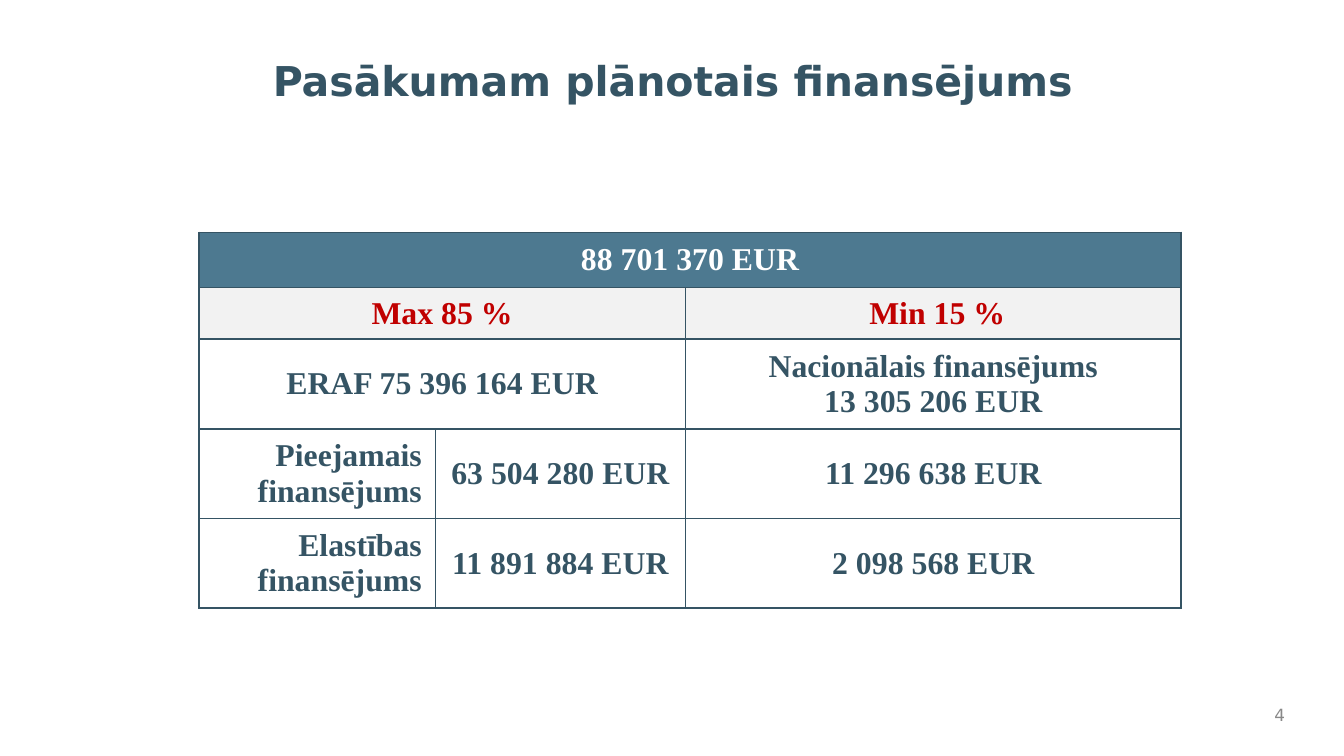
"""Build the slide with the funding planned for the measure."""
from lxml import etree
from pptx import Presentation
from pptx.dml.color import RGBColor
from pptx.enum.text import MSO_ANCHOR, PP_ALIGN
from pptx.oxml.ns import qn
from pptx.util import Inches, Pt

LEFT, MID, RIGHT = PP_ALIGN.LEFT, PP_ALIGN.CENTER, PP_ALIGN.RIGHT
CENTRE = MSO_ANCHOR.MIDDLE

THEME = {
    "ink": "355464", "head": "4D7990", "band": "F2F2F2", "red": "C00000",
    "grey": "898989", "white": "FFFFFF",
    "title": {"name": "DejaVu Sans", "size": Pt(22), "bold": True},
    "cell": {"name": "Times New Roman", "size": Pt(17), "bold": True},
    "page": {"name": "DejaVu Sans", "size": Pt(9), "bold": False},
}


def write(frame, text, style, color, align):
    frame.text = text
    frame.word_wrap = True
    for para in frame.paragraphs:
        para.alignment = align
        for run in para.runs:
            for key, value in THEME[style].items():
                setattr(run.font, key, value)
            run.font.color.rgb = RGBColor.from_string(THEME[color])


def edge(cell):
    props = cell._tc.get_or_add_tcPr()
    for spot, side in enumerate(("lnL", "lnR", "lnT", "lnB")):
        line = etree.Element(qn("a:" + side), w=str(Pt(1)))
        fill = etree.SubElement(line, qn("a:solidFill"))
        etree.SubElement(fill, qn("a:srgbClr"), val=THEME["ink"])
        props.insert(spot, line)


deck = Presentation()
deck.slide_width = Inches(10)
deck.slide_height = Inches(10 * 9 / 16)
slide = deck.slides.add_slide(deck.slide_layouts[5])

title = slide.shapes.title
place = {"left": 1.93, "top": 0.36, "width": 6.67, "height": 0.54}
for key, value in place.items():
    setattr(title, key, Inches(value))
write(title.text_frame, "Pasākumam plānotais finansējums", "title", "ink", LEFT)
title.text_frame.vertical_anchor = CENTRE
title.text_frame.margin_bottom = Inches(0.12)

page = slide.shapes.add_textbox(
    Inches(9.33), Inches(5.19), Inches(0.33), Inches(0.25))
write(page.text_frame, "4", "page", "grey", RIGHT)
page.text_frame.vertical_anchor = CENTRE

widths = [1.76, 1.86, 3.69]
rows = [
    (0.41, "head", "white", ["88 701 370 EUR", None, None]),
    (0.27, "band", "red", ["Max 85 %", None, " Min 15 %"]),
    (0.29, "white", "ink", ["ERAF 75 396 164 EUR", None,
                            "Nacionālais finansējums\n13 305 206 EUR"]),
    (0.41, "white", "ink", ["Pieejamais finansējums", "63 504 280 EUR",
                            "11 296 638 EUR"]),
    (0.41, "white", "ink", ["Elastības finansējums", "11 891 884 EUR",
                            "2 098 568 EUR"]),
]
grid = slide.shapes.add_table(
    len(rows), len(widths), Inches(1.48), Inches(1.73),
    Inches(7.3), Inches(2.79))
table = grid.table
table.first_row = table.horz_banding = False
for col, width in zip(table.columns, widths):
    col.width = Inches(width)
for y, (height, fill, color, texts) in enumerate(rows):
    table.rows[y].height = Inches(height)
    for x, text in enumerate(texts):
        cell = table.cell(y, x)
        cell.fill.solid()
        cell.fill.fore_color.rgb = RGBColor.from_string(THEME[fill])
        cell.vertical_anchor = CENTRE
        edge(cell)
        if text:
            side = RIGHT if x == 0 and None not in texts else MID
            write(cell.text_frame, text, "cell", color, side)
    if None in texts:
        table.cell(y, 0).merge(table.cell(y, texts.count(None)))
grid.height = Inches(2.79)

deck.save("out.pptx")
